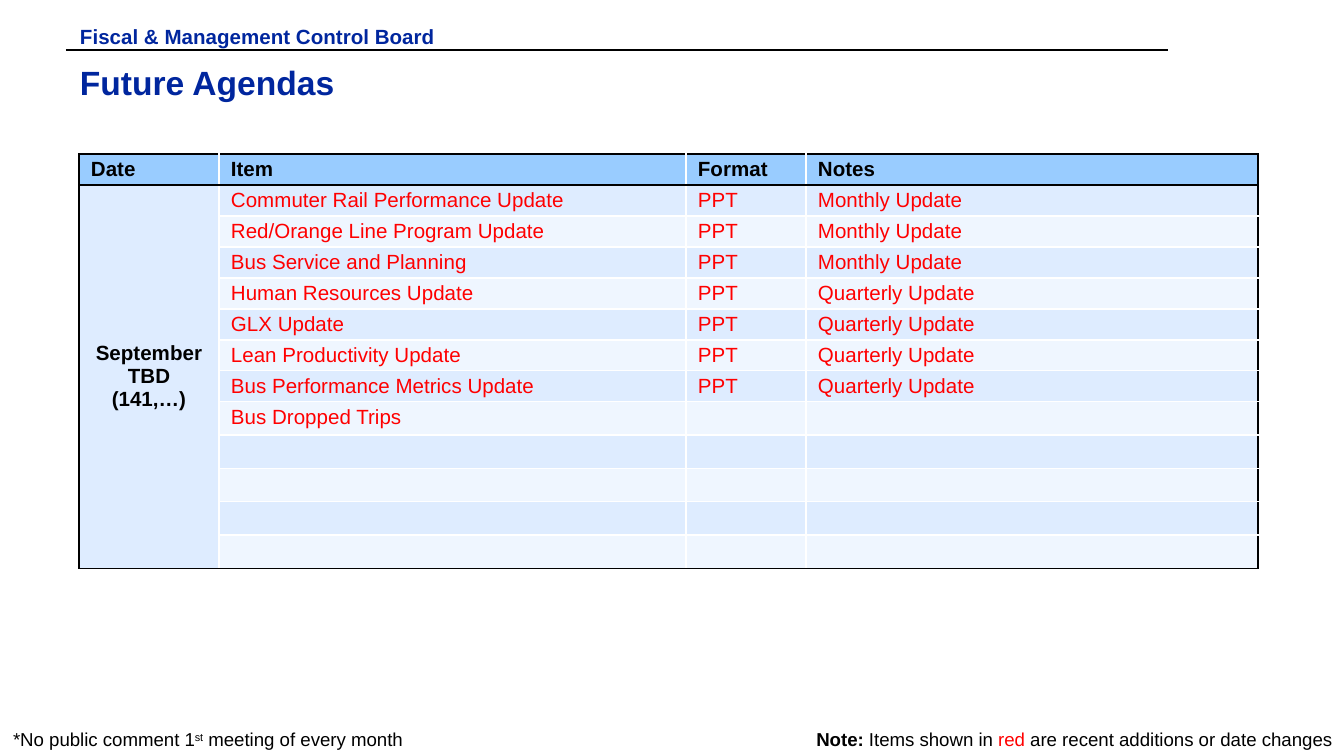
from lxml import etree
from pptx import Presentation
from pptx.dml.color import RGBColor
from pptx.enum.shapes import MSO_CONNECTOR
from pptx.enum.text import MSO_ANCHOR, MSO_AUTO_SIZE, PP_ALIGN
from pptx.oxml.ns import qn
from pptx.util import Emu, Pt

STRAIGHT = MSO_CONNECTOR.STRAIGHT
TOP, MIDDLE = MSO_ANCHOR.TOP, MSO_ANCHOR.MIDDLE
LEFT, CENTER, RIGHT = PP_ALIGN.LEFT, PP_ALIGN.CENTER, PP_ALIGN.RIGHT
NO_AUTO_SIZE = MSO_AUTO_SIZE.NONE
EMU_PER_PX = 6804
BLACK, WHITE, RED, NAVY = "000000", "FFFFFF", "FF0000", "00269E"
HEADER_FILL, BAND_FILLS = "99CCFF", ("DEECFF", "EFF6FF")

COLUMN_WIDTHS = (140, 467, 120, 452)
ROW_HEIGHT = 31
HEADERS = ("Date", "Item", "Format", "Notes")
MEETING_DATE = ("September TBD", "(141,…)")
AGENDA = (
    ("Commuter Rail Performance Update", "PPT", "Monthly Update"),
    ("Red/Orange Line Program Update", "PPT", "Monthly Update"),
    ("Bus Service and Planning", "PPT", "Monthly Update"),
    ("Human Resources Update", "PPT", "Quarterly Update"),
    ("GLX Update", "PPT", "Quarterly Update"),
    ("Lean Productivity Update", "PPT", "Quarterly Update"),
    ("Bus Performance Metrics Update", "PPT", "Quarterly Update"),
    ("Bus Dropped Trips", "", ""),
) + (("", "", ""),) * 4


def px(length):
    return Emu(length * EMU_PER_PX)


def color(hex_string):
    return RGBColor.from_string(hex_string)


class AgendaSlide:
    """Hold the slide and its text style, and draw each kind of element."""

    def __init__(self, slide, font="Arial"):
        self.slide = slide
        self.font = font

    def add_run(self, paragraph, text, size, hex_string=BLACK, bold=False, raised=False):
        run = paragraph.add_run()
        run.text = text
        run.font.name = self.font
        run.font.size = Pt(size)
        run.font.bold = bold
        run.font.color.rgb = color(hex_string)
        if raised:
            run.font._element.set("baseline", "30000")

    def set_frame(self, frame, top_margin, wrap=True):
        frame.auto_size = NO_AUTO_SIZE
        frame.word_wrap = wrap
        frame.vertical_anchor = TOP
        frame.margin_left = frame.margin_right = px(12)
        frame.margin_top, frame.margin_bottom = px(top_margin), px(5)

    def fill_placeholder(self, shape, box, text, size):
        shape.left, shape.top, shape.width, shape.height = map(px, box)
        self.set_frame(shape.text_frame, 8)
        paragraph = shape.text_frame.paragraphs[0]
        properties = paragraph._p.get_or_add_pPr()
        properties.set("marL", "0")
        properties.set("indent", "0")
        etree.SubElement(properties, qn("a:buNone"))
        paragraph.alignment = LEFT
        paragraph.space_before = Pt(0)
        self.add_run(paragraph, text, size, NAVY, True)

    def add_rule(self, left, right, top):
        connector = self.slide.shapes.add_connector(STRAIGHT, px(left), px(top), px(right), px(top))
        connector.line.color.rgb = color(BLACK)
        connector.line.width = Pt(1)
        etree.SubElement(connector._element.spPr, qn("a:effectLst"))

    def add_note(self, box, runs, alignment=LEFT, wrap=True):
        frame = self.slide.shapes.add_textbox(*map(px, box)).text_frame
        self.set_frame(frame, 6, wrap)
        paragraph = frame.paragraphs[0]
        paragraph.alignment = alignment
        for text, style in runs:
            self.add_run(paragraph, text, 10, **style)

    def set_borders(self, cell, **sides):
        properties = cell._tc.get_or_add_tcPr()
        for side in "LRTB":
            line = etree.SubElement(properties, qn(f"a:ln{side}"), w=str(Pt(1)))
            fill = etree.SubElement(line, qn("a:solidFill"))
            etree.SubElement(fill, qn("a:srgbClr"), val=sides[side])

    def fill_cell(self, cell, lines, fill, hex_string=BLACK, bold=False, alignment=LEFT):
        cell.margin_left = cell.margin_right = px(12)
        cell.margin_top = cell.margin_bottom = px(4)
        cell.vertical_anchor = MIDDLE if bold else TOP
        cell.fill.solid()
        cell.fill.fore_color.rgb = color(fill)
        frame = cell.text_frame
        for index, text in enumerate(lines):
            paragraph = frame.add_paragraph() if index else frame.paragraphs[0]
            paragraph.alignment = alignment
            if text:
                self.add_run(paragraph, text, 11, hex_string, bold)
            else:
                etree.SubElement(paragraph._p, qn("a:endParaRPr"), sz="1100")

    def add_agenda_table(self, left, top):
        row_count, column_count = len(AGENDA) + 1, len(HEADERS)
        table = self.slide.shapes.add_table(
            row_count, column_count, px(left), px(top),
            px(sum(COLUMN_WIDTHS)), px(ROW_HEIGHT * row_count)).table
        for column, width in zip(table.columns, COLUMN_WIDTHS):
            column.width = px(width)
        for row in table.rows:
            row.height = px(ROW_HEIGHT)
        table.cell(1, 0).merge(table.cell(row_count - 1, 0))
        for row in range(row_count):
            for column in range(column_count):
                cell = table.cell(row, column)
                if cell.is_spanned:
                    continue
                self.set_borders(
                    cell,
                    L=BLACK if column == 0 else WHITE,
                    R=BLACK if column == column_count - 1 else WHITE,
                    T=BLACK if row < 2 else WHITE,
                    B=BLACK if row in (0, row_count - 1) or column == 0 else WHITE)
                band = BAND_FILLS[(row - 1) % 2]
                if row == 0:
                    self.fill_cell(cell, [HEADERS[column]], HEADER_FILL, bold=True)
                elif column == 0:
                    self.fill_cell(cell, MEETING_DATE, band, bold=True, alignment=CENTER)
                else:
                    self.fill_cell(cell, [AGENDA[row - 1][column - 1]], band, RED)


def main():
    presentation = Presentation()
    presentation.slide_width, presentation.slide_height = px(1344), px(756)
    slide = presentation.slides.add_slide(presentation.slide_layouts[1])
    agenda = AgendaSlide(slide)
    title, body = slide.placeholders
    agenda.add_rule(66, 1168, 50)
    agenda.add_note((1, 722, 559, 35), (
        ("*No public comment 1", {}),
        ("st", {"raised": True}),
        (" meeting of every month", {})))
    agenda.add_note((780, 722, 564, 35), (
        ("Note: ", {"bold": True}),
        ("Items shown in ", {}),
        ("red", {"hex_string": RED}),
        (" are recent additions or date changes", {})), RIGHT, wrap=False)
    agenda.fill_placeholder(title, (68, 54, 1124, 64), "Future Agendas", 18)
    agenda.fill_placeholder(body, (68, 16, 458, 26), "Fiscal & Management Control Board", 11)
    agenda.add_agenda_table(79, 154)
    presentation.save("out.pptx")


if __name__ == "__main__":
    main()
